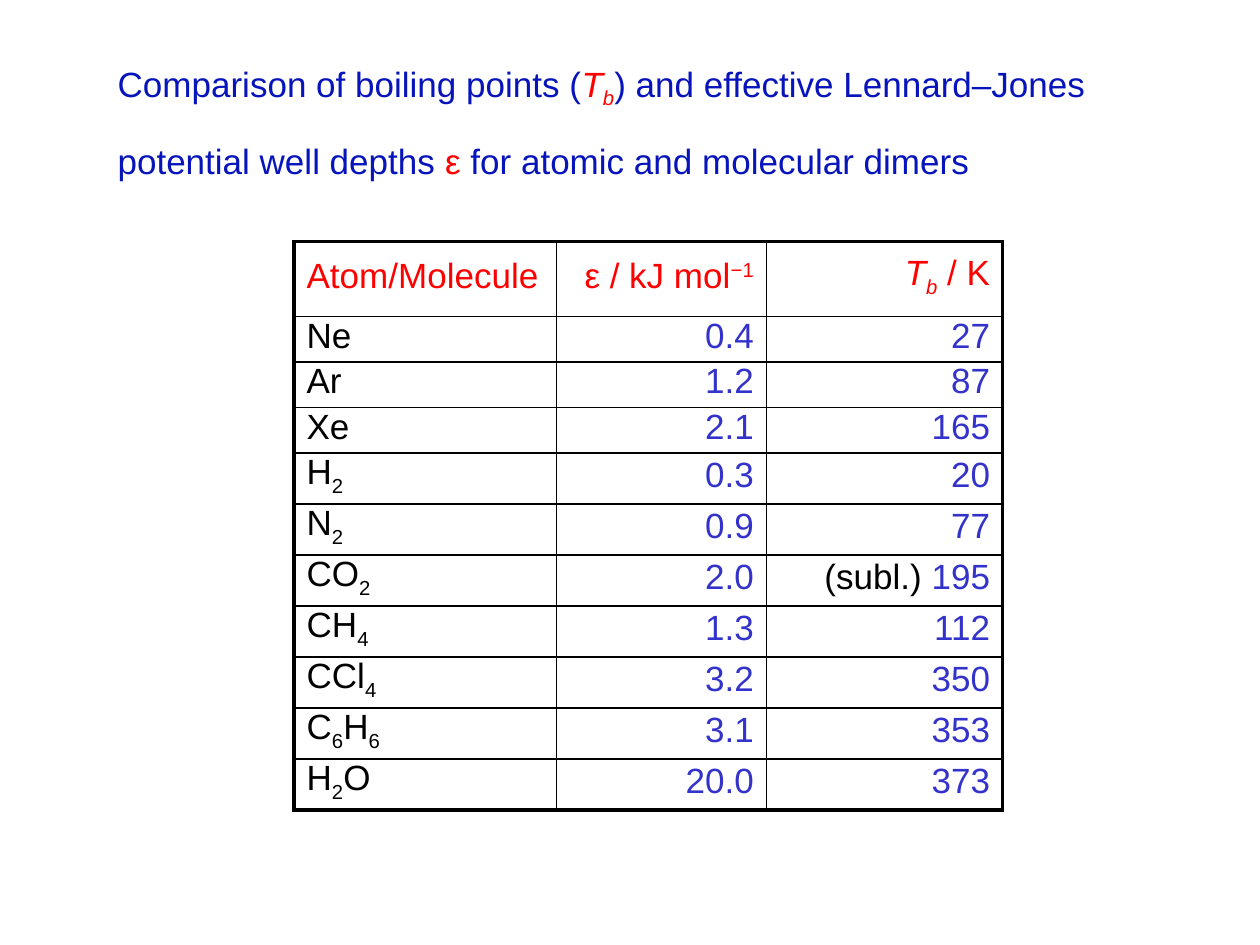
from dataclasses import dataclass
from itertools import groupby

from lxml.etree import SubElement
from pptx import Presentation
from pptx.dml.color import RGBColor
from pptx.enum.text import MSO_ANCHOR, MSO_AUTO_SIZE, PP_ALIGN
from pptx.oxml.ns import qn
from pptx.util import Pt


@dataclass(frozen=True)
class Theme:
    """Colours, type and line widths of the slide."""
    font: str = "Arial"
    size: int = 20
    title: str = "0714BB"
    accent: str = "FF0000"
    value: str = "3333CC"
    ink: str = "000000"
    frame: float = 2.25
    rule: float = 1


THEME = Theme()
SUB, SUPER = -25, 30
WIDTHS = (150, 120, 135)
HEAD, ROW = 43, 23
DATA = [
    ("Ne", "0.4", "27"),
    ("Ar", "1.2", "87"),
    ("Xe", "2.1", "165"),
    ("H2", "0.3", "20"),
    ("N2", "0.9", "77"),
    ("CO2", "2.0", "195"),
    ("CH4", "1.3", "112"),
    ("CCl4", "3.2", "350"),
    ("C6H6", "3.1", "353"),
    ("H2O", "20.0", "373"),
]
NOTES = {"CO2": "(subl.) "}


def write(para, text, color=THEME.ink, italic=False, base=0):
    """Add one formatted run to a paragraph."""
    run = para.add_run()
    run.text = text
    font = run.font
    font.name, font.size = THEME.font, Pt(THEME.size)
    font.bold, font.italic = False, italic
    font.color.rgb = RGBColor.from_string(color)
    if base:
        run._r.get_or_add_rPr().set("baseline", str(base * 1000))


def write_boil(para):
    """Write the boiling point symbol with its subscript."""
    write(para, "T", THEME.accent, italic=True)
    write(para, "b", THEME.accent, italic=True, base=SUB)


def write_formula(para, text):
    """Write a chemical formula with its digits as subscripts."""
    for digit, chars in groupby(text, str.isdigit):
        write(para, "".join(chars), base=SUB if digit else 0)


def edge(cell, sides):
    """Draw the four borders of a cell from a side to width map."""
    props = cell._tc.get_or_add_tcPr()
    for side, width in sides.items():
        line = SubElement(props, qn(f"a:ln{side}"), w=str(Pt(width)))
        fill = SubElement(line, qn("a:solidFill"))
        SubElement(fill, qn("a:srgbClr"), val=THEME.ink)


def add_title(slide, left, top, width, height):
    """Place the title in the given box."""
    title = slide.shapes.title
    title.left, title.top = Pt(left), Pt(top)
    title.width, title.height = Pt(width), Pt(height)
    frame = title.text_frame
    frame.word_wrap = True
    frame.auto_size = MSO_AUTO_SIZE.NONE
    frame.vertical_anchor = MSO_ANCHOR.MIDDLE
    para = frame.paragraphs[0]
    para.alignment, para.line_spacing = PP_ALIGN.LEFT, 1.7
    write(para, "Comparison of boiling points (", THEME.title)
    write_boil(para)
    write(para, ") and effective Lennard–Jones potential well depths ", THEME.title)
    write(para, "ε", THEME.accent)
    write(para, " for atomic and molecular dimers", THEME.title)


def style_cell(cell, row, col):
    """Set the margins, alignment and borders of a cell."""
    cell.margin_left = cell.margin_right = Pt(7.2)
    cell.margin_top, cell.margin_bottom = Pt(0), Pt(3.6)
    cell.vertical_anchor = MSO_ANCHOR.MIDDLE
    cell.text_frame.paragraphs[0].alignment = PP_ALIGN.RIGHT if col else PP_ALIGN.LEFT
    outer = {"L": col == 0, "R": col == len(WIDTHS) - 1,
             "T": row == 0, "B": row == len(DATA)}
    edge(cell, {side: THEME.frame if out else THEME.rule for side, out in outer.items()})
    cell.fill.background()


def add_grid(slide, left, top, width, height):
    """Place the table of well depths and boiling points in the given box."""
    shape = slide.shapes.add_table(len(DATA) + 1, len(WIDTHS),
                                   Pt(left), Pt(top), Pt(width), Pt(height))
    table = shape.table
    table.first_row = table.horz_banding = False
    for col, share in zip(table.columns, WIDTHS):
        col.width = Pt(width * share / sum(WIDTHS))
    for index, row in enumerate(table.rows):
        row.height = Pt(ROW if index else HEAD)
        for col, cell in enumerate(row.cells):
            style_cell(cell, index, col)
        atom, depth, boil = [cell.text_frame.paragraphs[0] for cell in row.cells]
        if index == 0:
            write(atom, "Atom/Molecule", THEME.accent)
            write(depth, "ε / kJ mol", THEME.accent)
            write(depth, "−1", THEME.accent, base=SUPER)
            write_boil(boil)
            write(boil, " / K", THEME.accent)
            continue
        name, well, point = DATA[index - 1]
        write_formula(atom, name)
        write(depth, well, THEME.value)
        if name in NOTES:
            write(boil, NOTES[name])
        write(boil, point, THEME.value)


def main():
    """Build and save the slide."""
    deck = Presentation()
    deck.slide_width, deck.slide_height = Pt(720), Pt(540)
    slide = deck.slides.add_slide(deck.slide_layouts[5])
    add_title(slide, 60, 42, 612, 36)
    add_grid(slide, 168, 138, sum(WIDTHS), HEAD + ROW * len(DATA))
    deck.save("out.pptx")


if __name__ == "__main__":
    main()
